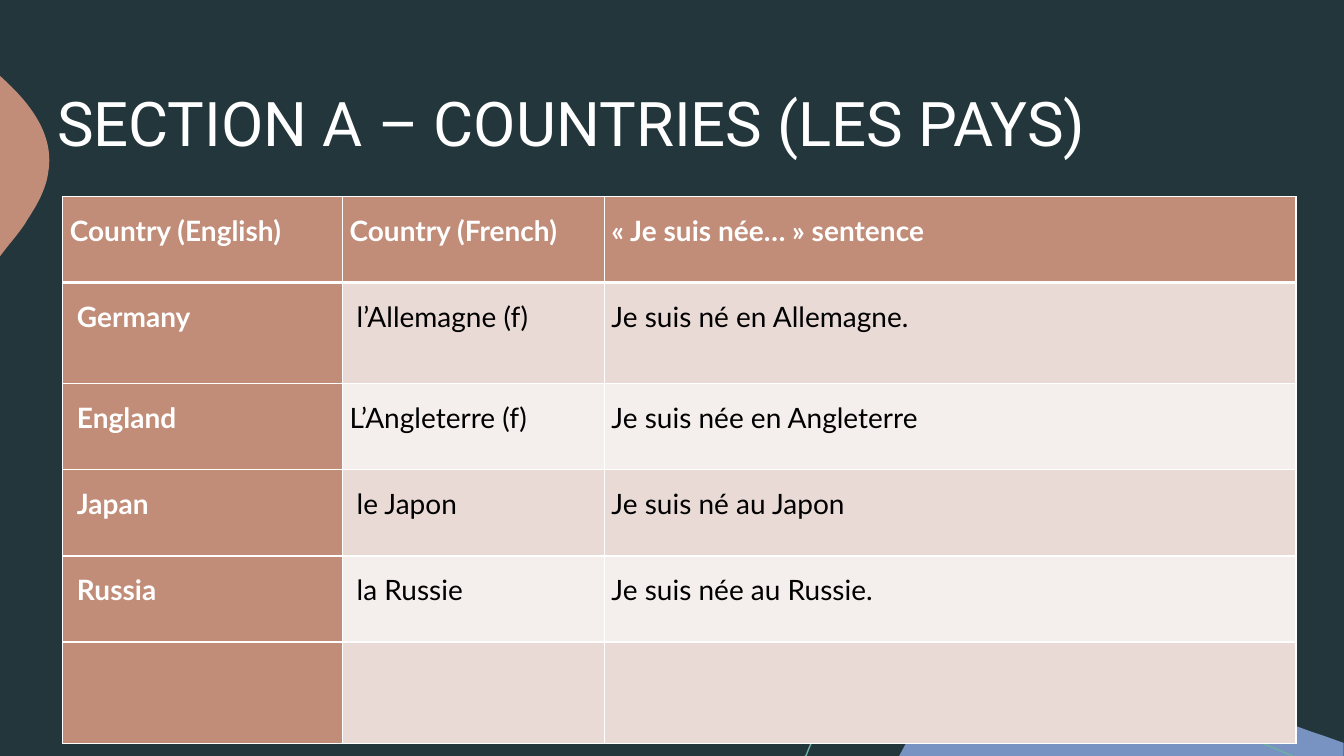
from lxml.etree import SubElement
from pptx import Presentation
from pptx.dml.color import RGBColor
from pptx.enum.text import MSO_ANCHOR
from pptx.oxml.ns import qn
from pptx.util import Cm, Pt

DARK_TEAL = RGBColor(0x22, 0x36, 0x3C)
BLUE = RGBColor(0x78, 0x93, 0xC1)
CLAY = RGBColor(0xC1, 0x8C, 0x78)
GREEN = RGBColor(0x6D, 0xAF, 0xA2)
ROSE = RGBColor(0xE9, 0xDA, 0xD6)
PALE_ROSE = RGBColor(0xF4, 0xEE, 0xEC)
WHITE = RGBColor(0xFF, 0xFF, 0xFF)
BLACK = RGBColor(0, 0, 0)

HILL = [
    [(4.11, 0)],
    [(5.99, 0), (7.92, 0.18), (9.68, 0.84)],
    [(10.01, 0.94), (10.31, 1.07), (10.64, 1.17)],
    [(11.2, 1.37)], [(11.2, 1.7)], [(0, 1.7)], [(0.15, 1.42)],
    [(0.25, 1.27), (0.36, 1.14), (0.48, 1.02)],
    [(1.19, 0.25), (2.29, 0.03), (3.33, 0)],
    [(3.58, 0), (3.84, 0), (4.11, 0)],
]
PEBBLE = [
    [(0, 0)], [(0.03, 0.03)],
    [(0.76, 0.69), (1.37, 1.47), (1.22, 2.41)],
    [(1.17, 2.84), (0.94, 3.25), (0.69, 3.63)],
    [(0.61, 3.78), (0.43, 4.01), (0.2, 4.29)],
    [(0, 4.55)],
]
ARC = [
    [(0, 1.98)], [(0.03, 1.96)],
    [(0.18, 1.55), (0.38, 1.19), (0.64, 0.91)],
    [(1.3, 0.23), (2.29, 0.03), (3.23, 0)],
    [(3.96, 0)],
    [(5.66, 0), (7.65, 0.43), (9.04, 0.76)],
    [(10.41, 1.09), (10.85, 1.4), (12.29, 1.98)],
]

COLUMN_WIDTHS = [7.05, 6.6, 17.43]
ROW_HEIGHTS = [2.17, 2.55, 2.17, 2.17, 2.17, 2.55]
COUNTRIES = [
    ("Country (English)", "Country (French)", "« Je suis née… » sentence"),
    ("Germany", "l’Allemagne (f)", "Je suis né en Allemagne."),
    ("England", "L’Angleterre (f)", "Je suis née en Angleterre"),
    ("Japan", "le Japon", "Je suis né au Japon"),
    ("Russia", "la Russie", "Je suis née au Russie."),
    ("", "", ""),
]
CELL_MARGIN = 0.18
INDENTED_MARGIN = 0.36


def bend(ornament, steps):
    """Turn the straight segments that have control points into cubic curves."""
    segments = list(ornament._element.iter(qn("a:lnTo")))
    for segment, step in zip(segments, steps[1:]):
        if len(step) == 3:
            curve = segment.makeelement(qn("a:cubicBezTo"))
            for x, y in step:
                SubElement(curve, qn("a:pt"), x=str(Cm(x)), y=str(Cm(y)))
            segment.getparent().replace(segment, curve)


def add_ornament(slide, left, top, steps, fill=None, line=None):
    """Draw a curved ornament from its top left corner."""
    ends = [(Cm(x), Cm(y)) for x, y in (step[-1] for step in steps)]
    builder = slide.shapes.build_freeform(*ends[0])
    builder.add_line_segments(ends[1:], close=fill is not None)
    ornament = builder.convert_to_shape(Cm(left), Cm(top))
    bend(ornament, steps)
    ornament.shadow.inherit = False
    if fill is None:
        ornament.fill.background()
    else:
        ornament.fill.solid()
        ornament.fill.fore_color.rgb = fill
    if line is None:
        ornament.line.fill.background()
    else:
        ornament.line.color.rgb = line
        ornament.line.width = Pt(1)


def add_run(paragraph, text, size, font, color, bold=False):
    """Append one formatted run."""
    run = paragraph.add_run()
    run.text = text
    run.font.size = Pt(size)
    run.font.name = font
    run.font.color.rgb = color
    run.font.bold = bold


def add_title(slide, left, top, width, height):
    """Place the section title, centred vertically in its box."""
    title = slide.shapes.add_textbox(Cm(left), Cm(top), Cm(width), Cm(height)).text_frame
    title.word_wrap = True
    title.vertical_anchor = MSO_ANCHOR.MIDDLE
    heading = title.paragraphs[0]
    heading.line_spacing = 0.9
    add_run(heading, "SECTION A – COUNTRIES (LES PAYS)", 44, "Roboto", WHITE)


def add_borders(cell, top, bottom):
    """Give a cell white borders, with its top and bottom widths in points."""
    properties = cell._tc.get_or_add_tcPr()
    for side, width in (("L", 1), ("R", 1), ("T", top), ("B", bottom)):
        border = SubElement(properties, qn(f"a:ln{side}"), w=str(Pt(width)))
        SubElement(SubElement(border, qn("a:solidFill")), qn("a:srgbClr"), val=str(WHITE))


def fill_cell(cell, text, row, column):
    """Style one cell by its place in the table and write its text."""
    add_borders(cell, 3 if row == 1 else 1, 3 if row == 0 else 1)
    emphasis = row == 0 or column == 0
    cell.fill.solid()
    cell.fill.fore_color.rgb = CLAY if emphasis else ROSE if row % 2 else PALE_ROSE
    indented = row > 0 and column < 2 and not text.startswith("L’")
    cell.margin_left = Cm(INDENTED_MARGIN if indented else CELL_MARGIN)
    cell.margin_right = Cm(CELL_MARGIN)
    cell.margin_top = cell.margin_bottom = Cm(0)
    if text:
        entry = cell.text_frame.paragraphs[0]
        entry.line_spacing = 1.5
        add_run(entry, text, 20, "Lato", WHITE if emphasis else BLACK, emphasis)


def add_countries(slide, left, top):
    """Build the table of countries from its top left corner."""
    countries = slide.shapes.add_table(
        len(ROW_HEIGHTS), len(COLUMN_WIDTHS), Cm(left), Cm(top),
        Cm(sum(COLUMN_WIDTHS)), Cm(sum(ROW_HEIGHTS))).table
    for column, width in zip(countries.columns, COLUMN_WIDTHS):
        column.width = Cm(width)
    for row, height in zip(countries.rows, ROW_HEIGHTS):
        row.height = Cm(height)
    for r, entries in enumerate(COUNTRIES):
        for c, text in enumerate(entries):
            fill_cell(countries.cell(r, c), text, r, c)


def main():
    """Build the slide and save it."""
    deck = Presentation()
    deck.slide_width, deck.slide_height = Cm(33.87), Cm(19.05)
    slide = deck.slides.add_slide(deck.slide_layouts[6])
    slide.background.fill.solid()
    slide.background.fill.fore_color.rgb = DARK_TEAL
    add_ornament(slide, 22.66, 17.35, HILL, fill=BLUE)
    add_ornament(slide, 0, 1.91, PEBBLE, fill=CLAY)
    add_ornament(slide, 20.29, 17.07, ARC, line=GREEN)
    add_title(slide, 1.19, 1.07, 29.64, 4.24)
    add_countries(slide, 1.58, 4.95)
    deck.save("out.pptx")


if __name__ == "__main__":
    main()
